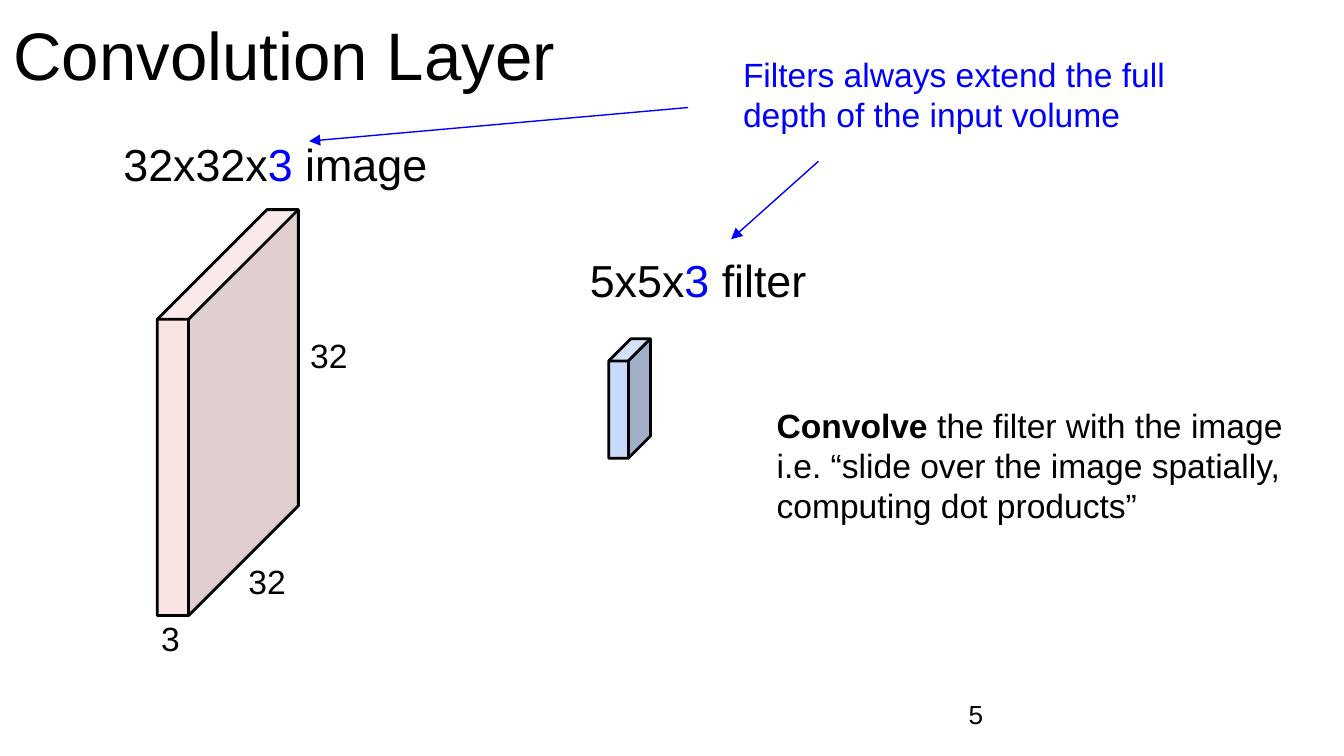
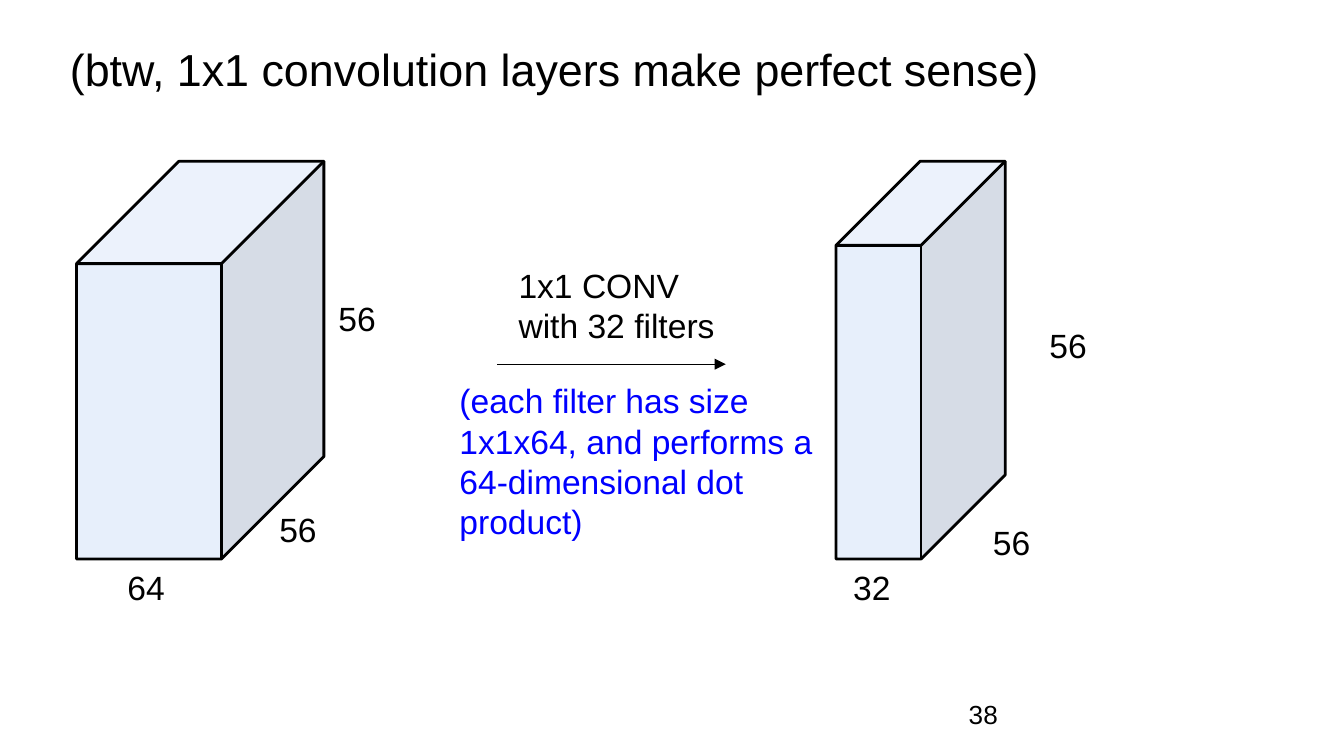
import lxml.etree
import pptx
import pptx.dml.color
import pptx.enum.shapes
import pptx.enum.text
import pptx.oxml.ns
import pptx.util

SLIDE_WIDTH = 10
SLIDE_HEIGHT = SLIDE_WIDTH * 9 / 16
GRID = 0.1  # inches per column and per row
INSET = 0.1
FONT = "Arial"
BLACK, BLUE = "000000", "0000FF"
PINK_FACE, BLUE_FACE = "F4CCCC", "C9DAF8"
TITLE_ONLY = 5
PAGE_NUMBER_BOX = (71.1, 51, 6, 4.3)
LABEL_SIZE = (5.4, 3.8)


def colour(value):
    return pptx.dml.color.RGBColor.from_string(value)


def grid(*cells):
    """Turn columns or rows into lengths."""
    return [pptx.util.Inches(cell * GRID) for cell in cells]


def add_xml(parent, tag, **values):
    return lxml.etree.SubElement(parent, pptx.oxml.ns.qn(tag), **values)


def write(shape, paragraphs, size, ink=BLACK, anchor="TOP"):
    """Fill a shape; each paragraph is a list of (text, font overrides)."""
    frame = shape.text_frame
    inset = pptx.util.Inches(INSET)
    frame_format = {
        "word_wrap": True,
        "auto_size": pptx.enum.text.MSO_AUTO_SIZE.NONE,
        "vertical_anchor": getattr(pptx.enum.text.MSO_ANCHOR, anchor),
        "margin_left": inset, "margin_top": inset,
        "margin_right": inset, "margin_bottom": inset,
    }
    for name, value in frame_format.items():
        setattr(frame, name, value)
    for index, spans in enumerate(paragraphs):
        para = frame.add_paragraph() if index else frame.paragraphs[0]
        para.alignment = pptx.enum.text.PP_ALIGN.LEFT
        for text, overrides in spans:
            span = para.add_run()
            span.text = text
            font_format = {"name": FONT, "size": pptx.util.Pt(size),
                           "bold": False, "color": ink} | overrides
            span.font.color.rgb = colour(font_format.pop("color"))
            for name, value in font_format.items():
                setattr(span.font, name, value)


def add_text(page, box, paragraphs, size=18, **style):
    write(page.shapes.add_textbox(*grid(*box)), paragraphs, size, **style)


def plain(*lines):
    return [[(line, {})] for line in lines]


def add_page(deck, title, title_box, title_size, number):
    page = deck.slides.add_slide(deck.slide_layouts[TITLE_ONLY])
    heading = page.shapes.title
    for name, value in zip(("left", "top", "width", "height"), grid(*title_box)):
        setattr(heading, name, value)
    write(heading, plain(title), title_size)
    add_text(page, PAGE_NUMBER_BOX, plain(number), 14, anchor="MIDDLE")
    return page


def add_volume(page, box, slant, face, opacity=100, labels=()):
    """Draw a cuboid; each label is (text, x share, y share, column and row offsets)."""
    left, top, width, height = box
    cuboid = page.shapes.add_shape(pptx.enum.shapes.MSO_SHAPE.CUBE, *grid(*box))
    cuboid.shadow.inherit = False
    cuboid.adjustments[0] = slant
    cuboid.fill.solid()
    cuboid.fill.fore_color.rgb = colour(face)
    if opacity < 100:
        fill_colour = cuboid.fill._xPr.find(".//" + pptx.oxml.ns.qn("a:srgbClr"))
        add_xml(fill_colour, "a:alpha", val=str(opacity * 1000))
    cuboid.line.color.rgb = colour(BLACK)
    cuboid.line.width = pptx.util.Pt(1.5)
    for text, across, down, columns, rows in labels:
        corner = (left + across * width + columns, top + down * height + rows)
        add_text(page, corner + LABEL_SIZE, plain(text))


def add_arrow(page, start, end, ink=BLACK):
    arrow = page.shapes.add_connector(
        pptx.enum.shapes.MSO_CONNECTOR.STRAIGHT, *grid(*start, *end))
    arrow.line.color.rgb = colour(ink)
    arrow.line.width = pptx.util.Pt(0.75)
    add_xml(arrow.line._get_or_add_ln(), "a:tailEnd", type="triangle")
    add_xml(arrow._element.spPr, "a:effectLst")


def add_size_caption(page, box, before, depth, after):
    """Name a volume, with its depth picked out in blue."""
    add_text(page, box, [[(before, {}), (depth, {"color": BLUE}), (after, {})]], 24)


def build_filter_page(deck):
    page = add_page(deck, "Convolution Layer", (0, 0, 84.2, 7.2), 36, "5")
    add_volume(page, (11.7, 15.6, 10.5, 30.2), 0.777, PINK_FACE, 52, [
        ("3", 0, 1, -0.7, -0.8),
        ("32", 1, 1, -4.7, -5.1),
        ("32", 1, 0, -0.1, 8.3),
    ])
    add_size_caption(page, (8.2, 9.2, 36.6, 5.2), "32x32x", "3", " image")
    add_volume(page, (45.3, 25.2, 3.1, 8.9), 0.534, BLUE_FACE)
    add_size_caption(page, (42.9, 17.8, 23.1, 3.9), "5x5x", "3", " filter")
    add_text(page, (56.8, 29.1, 43.2, 8.3), [
        [("Convolve ", {"bold": True}), ("the filter with the image", {})],
        [("i.e. “slide over the image spatially, computing dot products”", {})],
    ])
    add_text(page, (54.3, 3, 35.9, 6.4), plain(
        "Filters always extend the full depth of the input volume"), ink=BLUE)
    add_arrow(page, (60.9, 12), (54.4, 17.8), BLUE)
    add_arrow(page, (51.2, 8), (23, 10.5), BLUE)


def build_one_by_one_page(deck):
    page = add_page(deck, "(btw, 1x1 convolution layers make perfect sense)",
                    (4.2, 2.1, 93, 10.4), 24, "38")
    add_volume(page, (5.7, 12, 18.4, 29.6), 0.414, BLUE_FACE, 43, [
        ("64", 0, 1, 2.8, -0.4),
        ("56", 1, 1, -4.3, -4.7),
        ("56", 1, 0, 0.1, 9.2),
    ])
    add_text(page, (37.6, 18.7, 19.5, 4.7), plain("1x1 CONV", "with 32 filters"))
    add_arrow(page, (37, 27.1), (54, 27.1))
    add_text(page, (33.2, 27.3, 31.2, 6.7), plain(
        "(each filter has size 1x1x64, and performs a 64-dimensional dot product)"),
        ink=BLUE)
    add_volume(page, (62.2, 12, 12.6, 29.6), 0.497, BLUE_FACE, 43, [
        ("32", 0, 1, 0.3, -0.4),
        ("56", 1, 1, -1.9, -3.8),
        ("56", 1, 0, 2.3, 11.2),
    ])


def main():
    deck = pptx.Presentation()
    deck.slide_width = pptx.util.Inches(SLIDE_WIDTH)
    deck.slide_height = pptx.util.Inches(SLIDE_HEIGHT)
    build_filter_page(deck)
    build_one_by_one_page(deck)
    deck.save("out.pptx")


if __name__ == "__main__":
    main()
